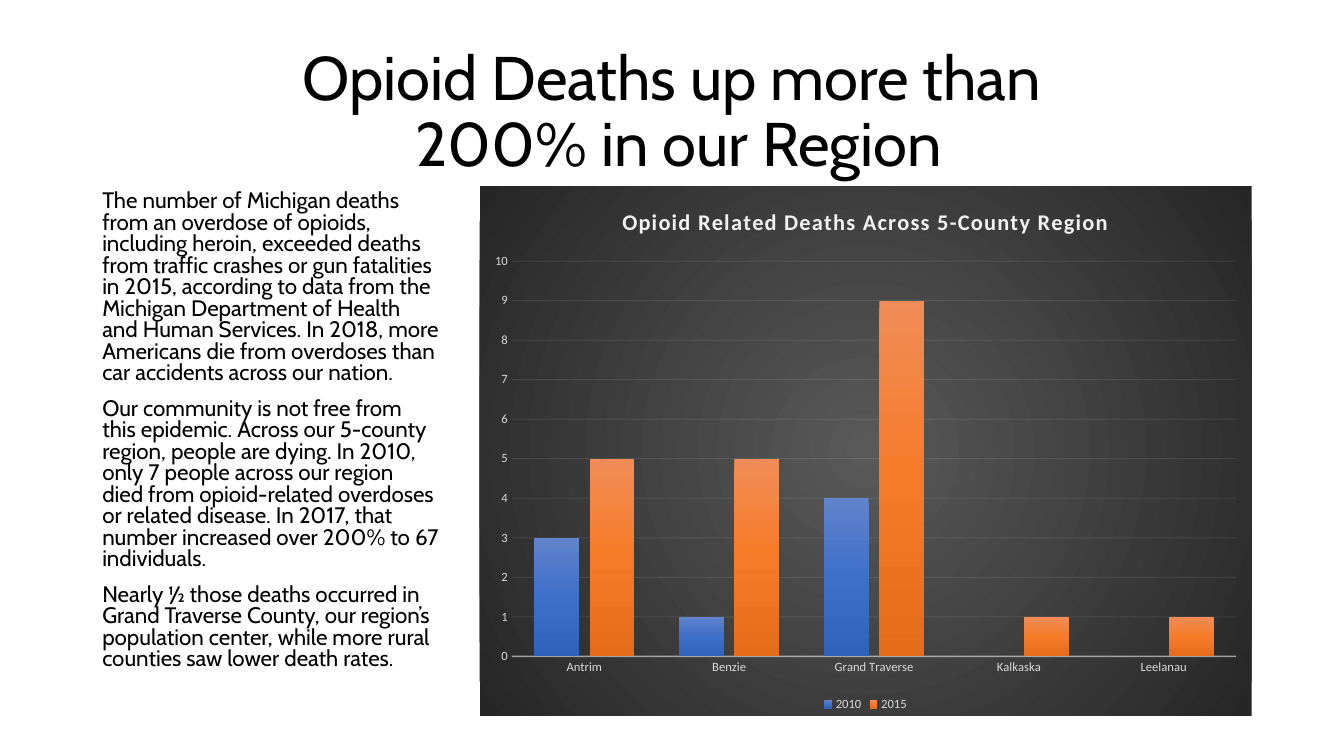
from lxml.etree import SubElement, fromstring
from pptx import Presentation
from pptx.chart.data import CategoryChartData
from pptx.dml.color import RGBColor
from pptx.enum.chart import XL_CHART_TYPE, XL_LEGEND_POSITION, XL_TICK_MARK
from pptx.enum.text import MSO_ANCHOR, PP_ALIGN
from pptx.oxml.ns import nsdecls, qn
from pptx.util import Pt

TITLE = ["Opioid Deaths up more than", " 200% in our Region"]
STORY = [
    "The number of Michigan deaths from an overdose of opioids, including heroin, "
    "exceeded deaths from traffic crashes or gun fatalities in 2015, according to data "
    "from the Michigan Department of Health and Human Services. In 2018, more Americans "
    "die from overdoses than car accidents across our nation.",
    "Our community is not free from this epidemic. Across our 5-county region, people "
    "are dying. In 2010, only 7 people across our region died from opioid-related "
    "overdoses or related disease. In 2017, that number increased over 200% to 67 "
    "individuals.",
    "Nearly ½ those deaths occurred in Grand Traverse County, our region’s population "
    "center, while more rural counties saw lower death rates.",
]
CHART_TITLE = "Opioid Related Deaths Across 5-County Region"
COUNTIES = ["Antrim", "Benzie", "Grand Traverse", "Kalkaska", "Leelanau"]
DEATHS = {
    "2010": ([3, 1, 4, 0, 0], ["6183CB", "3E70CA", "3062BB"]),
    "2015": ([5, 5, 9, 1, 1], ["F18C57", "F67B28", "E56C19"]),
}
LINEAR = '<a:lin ang="5400000" scaled="0"/>'
RADIAL = ('<a:path path="circle">'
          '<a:fillToRect l="50000" t="50000" r="50000" b="50000"/></a:path>')


def color(hex_code):
    return RGBColor.from_string(hex_code)


def style_font(font, size, hex_code, name, bold=False):
    font.size, font.name, font.bold = Pt(size), name, bold
    font.color.rgb = color(hex_code)


def write_text(frame, paragraphs, size=16, hex_code="000000", name="Cabin", bold=False,
               align=PP_ALIGN.LEFT, line_spacing=None, gap=0, tracking=0):
    for number, lines in enumerate(paragraphs):
        paragraph = frame.add_paragraph() if number else frame.paragraphs[0]
        paragraph.alignment = align
        if line_spacing:
            paragraph.line_spacing = line_spacing
        if number:
            paragraph.space_before = Pt(gap)
        for row, line in enumerate(lines):
            if row:
                paragraph.add_line_break()
            run = paragraph.add_run()
            run.text = line
            style_font(run.font, size, hex_code, name, bold)
            if tracking:
                run.font._element.set("spc", str(tracking))


def gradient(hex_codes, direction):
    step = 100000 // (len(hex_codes) - 1)
    stops = "".join(f'<a:gs pos="{number * step}"><a:srgbClr val="{code}"/></a:gs>'
                    for number, code in enumerate(hex_codes))
    return fromstring(f'<a:gradFill {nsdecls("a")} rotWithShape="1">'
                      f'<a:gsLst>{stops}</a:gsLst>{direction}</a:gradFill>')


def style_line(line, width, opacity):
    line.width = Pt(width)
    line.color.rgb = color("F2F2F2")
    for tint in line._ln.iter(qn("a:srgbClr")):
        SubElement(tint, qn("a:alpha")).set("val", str(opacity * 1000))


def add_text_region(slide, box, paragraphs, anchor, **text_format):
    frame = slide.shapes.add_textbox(*map(Pt, box)).text_frame
    frame.word_wrap = True
    frame.vertical_anchor = anchor
    write_text(frame, paragraphs, **text_format)


def style_axes(chart):
    counties, deaths = chart.category_axis, chart.value_axis
    for axis in (counties, deaths):
        axis.major_tick_mark = axis.minor_tick_mark = XL_TICK_MARK.NONE
        style_font(axis.tick_labels.font, 9, "D9D9D9", "Calibri")
    style_line(counties.format.line, 1, 54)
    deaths.format.line.fill.background()
    deaths.minimum_scale, deaths.maximum_scale, deaths.major_unit = 0, 10, 1
    deaths.has_major_gridlines = True
    style_line(deaths.major_gridlines.format.line, 0.75, 10)


def add_deaths_chart(slide, box):
    data = CategoryChartData(number_format="General")
    data.categories = COUNTIES
    for year, (counts, _) in DEATHS.items():
        data.add_series(year, counts)
    chart = slide.shapes.add_chart(
        XL_CHART_TYPE.COLUMN_CLUSTERED, *map(Pt, box), data).chart
    style_font(chart.font, 10, "000000", "Calibri")

    backdrop = fromstring(f'<c:spPr {nsdecls("c", "a")}/>')
    backdrop.append(gradient(["595959", "262626"], RADIAL))
    SubElement(SubElement(backdrop, qn("a:ln")), qn("a:noFill"))
    chart._chartSpace.find(qn("c:chart")).addnext(backdrop)

    chart.has_title = True
    write_text(chart.chart_title.text_frame, [[CHART_TITLE]], size=16, hex_code="F2F2F2",
               name="Calibri", bold=True, align=PP_ALIGN.CENTER, tracking=100)
    chart.chart_title.include_in_layout = False
    chart.has_legend = True
    chart.legend.position = XL_LEGEND_POSITION.BOTTOM
    chart.legend.include_in_layout = False
    style_font(chart.legend.font, 9, "D9D9D9", "Calibri")
    style_axes(chart)

    columns = chart.plots[0]
    columns.gap_width, columns.overlap = 100, -24
    columns.vary_by_categories = False
    for series, (_, shades) in zip(columns.series, DEATHS.values()):
        series.invert_if_negative = False
        series._element.get_or_add_spPr().insert(0, gradient(shades, LINEAR))


def build_slide(slide, left, top, width, height):
    title_height, story_width, chart_offset = 104.4, 255, 276.6
    body_top, body_height = top + title_height, height - title_height
    add_text_region(slide, (left, top, width, title_height), [TITLE], MSO_ANCHOR.MIDDLE,
                    size=44, align=PP_ALIGN.CENTER, line_spacing=0.9)
    add_text_region(slide, (left, body_top, story_width, body_height),
                    [[passage] for passage in STORY], MSO_ANCHOR.TOP,
                    line_spacing=0.8, gap=10)
    add_deaths_chart(slide, (left + chart_offset, body_top,
                             width - chart_offset, body_height))


def main():
    deck = Presentation()
    deck.slide_width, deck.slide_height = Pt(960), Pt(540)
    build_slide(deck.slides.add_slide(deck.slide_layouts[6]), 66, 28.8, 828, 482.4)
    deck.save("out.pptx")


if __name__ == "__main__":
    main()
